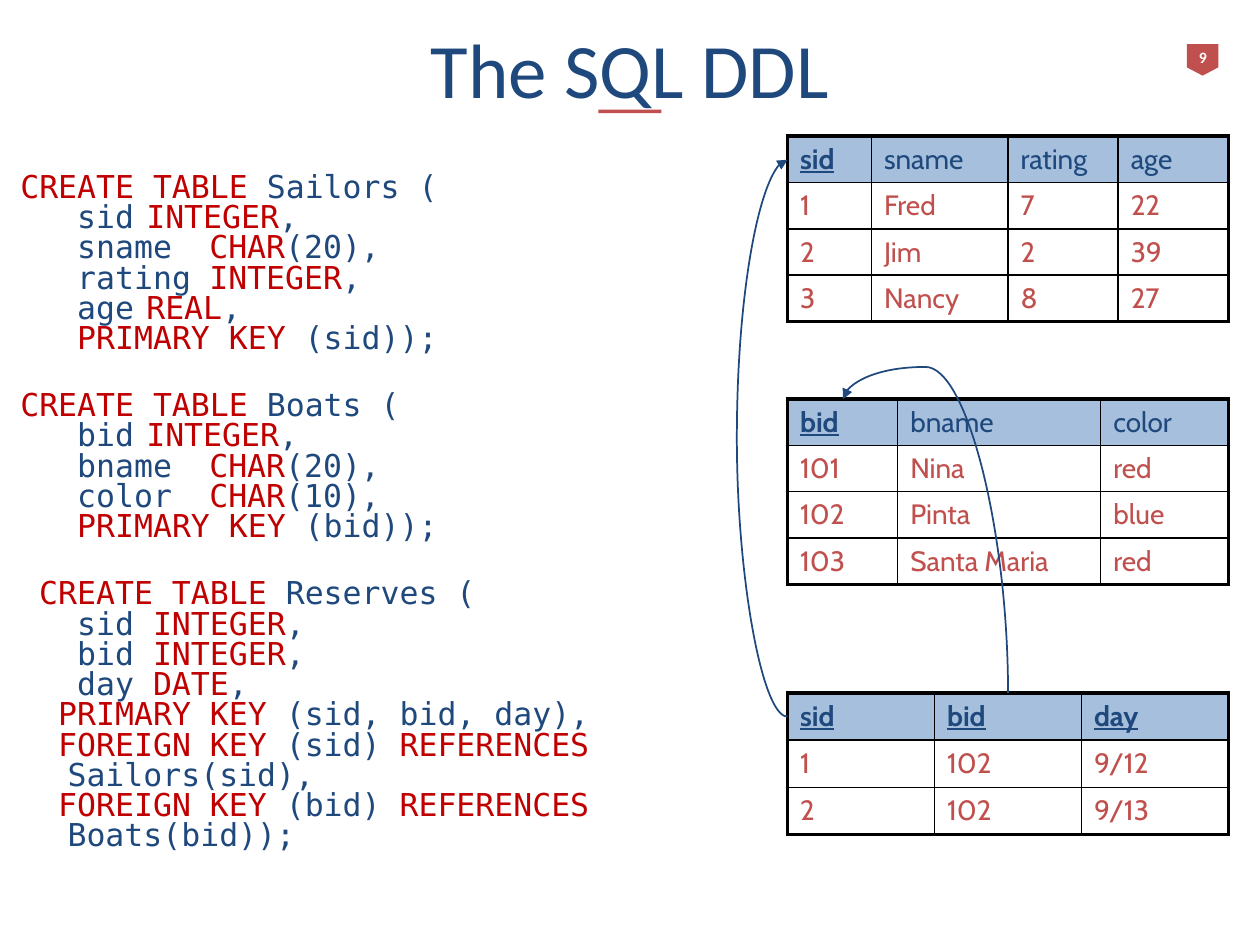
from pptx import Presentation
from pptx.dml.color import RGBColor
from pptx.enum.shapes import MSO_CONNECTOR, MSO_SHAPE
from pptx.enum.text import MSO_ANCHOR, PP_ALIGN
from pptx.oxml import parse_xml
from pptx.oxml.ns import nsdecls
from pptx.util import Pt

CURVE = MSO_CONNECTOR.CURVE
PENTAGON, RECTANGLE = MSO_SHAPE.PENTAGON, MSO_SHAPE.RECTANGLE
MIDDLE, CENTER = MSO_ANCHOR.MIDDLE, PP_ALIGN.CENTER

COLORS = {"navy": "1F497D", "red": "C0504D", "keyword": "C00000",
          "blue": "4F81BD", "white": "FFFFFF", "black": "000000"}
HEADING_FONT, TABLE_FONT, CODE_FONT = "Calibri", "Cabin", "DejaVu Sans Mono"
CHARACTER = 10.84  # width of one code character at 18 pt
HANGING = 27
THICK, THIN = 2.25, 1

# Each statement: column of the data types, then (indent in characters, line).
# Keywords stand between asterisks.
STATEMENTS = [
    (10, [(0, "*CREATE TABLE *Sailors ("), (3, "sid\t*INTEGER*,"),
          (3, "sname\t*CHAR*(20),"), (3, "rating\t*INTEGER*,"),
          (3, "age\t*REAL*,"), (3, "*PRIMARY KEY* (sid));")]),
    (9, [(0, "*CREATE TABLE* Boats ("), (3, "bid\t*INTEGER*,"),
         (3, "bname\t*CHAR*(20),"), (3, "color\t*CHAR*(10),"),
         (3, "*PRIMARY KEY* (bid));")]),
    (7, [(1, "*CREATE TABLE* Reserves ("), (3, "sid *INTEGER*,"),
         (3, "bid *INTEGER*,"), (3, "day *DATE*,"),
         (2, "*PRIMARY KEY* (sid, bid, day),"),
         (2, "*FOREIGN KEY* (sid) *REFERENCES *Sailors(sid),"),
         (2, "*FOREIGN KEY* (bid) *REFERENCES *Boats(bid));")]),
]

# Top, row height, column widths, number of key columns, rows
TABLES = [
    (77.8, 26.5, [48, 78, 63, 63], 1,
     [["sid", "sname", "rating", "age"], ["1", "Fred", "7", "22"],
      ["2", "Jim", "2", "39"], ["3", "Nancy", "8", "27"]]),
    (228, 26.5, [63, 116, 73], 1,
     [["bid", "bname", "color"], ["101", "Nina", "red"],
      ["102", "Pinta", "blue"], ["103", "Santa Maria", "red"]]),
    (396, 27, [84, 84, 84], 3,
     [["sid", "bid", "day"], ["1", "102", "9/12"], ["2", "102", "9/13"]]),
]


def color(name):
    return RGBColor.from_string(COLORS[name])


def add_run(paragraph, text, font, size, color_name, bold=False, underline=False):
    run = paragraph.add_run()
    run.text = text
    run.font.name, run.font.size = font, Pt(size)
    run.font.bold, run.font.underline = bold, underline
    run.font.color.rgb = color(color_name)


def add_solid(shapes, kind, left, top, width, height):
    shape = shapes.add_shape(kind, Pt(left), Pt(top), Pt(width), Pt(height))
    shape.shadow.inherit = False
    shape.fill.solid()
    shape.fill.fore_color.rgb = color("red")
    shape.line.fill.background()
    return shape


def add_title(slide):
    title = slide.shapes.title
    title.left, title.top, title.width, title.height = Pt(36), Pt(18), Pt(648), Pt(41)
    title.text_frame.vertical_anchor = MIDDLE
    paragraph = title.text_frame.paragraphs[0]
    paragraph.alignment = CENTER
    add_run(paragraph, "The SQL DDL", HEADING_FONT, 44, "navy")
    add_solid(slide.shapes, RECTANGLE, 342, 62.6, 36, 2)


def add_page_badge(slide):
    group = slide.shapes.add_group_shape()
    badge = add_solid(group.shapes, PENTAGON, 678.2, 25.2, 18, 18)
    badge.rotation = 90
    badge.adjustments[0] = 0.26
    label = group.shapes.add_textbox(Pt(675.4), Pt(23.8), Pt(24), Pt(18))
    label.text_frame.word_wrap = False
    paragraph = label.text_frame.paragraphs[0]
    paragraph.alignment = CENTER
    add_run(paragraph, "9", HEADING_FONT, 9, "white", bold=True)


def indent_code(paragraph, characters, type_column, wraps):
    """Indent the first line, hang a wrapped one, and align the data types."""
    properties = paragraph._p.get_or_add_pPr()
    margin = HANGING if wraps else 0
    properties.set("marL", str(Pt(margin)))
    properties.set("indent", str(Pt(characters * CHARACTER - margin)))
    properties.append(parse_xml(
        f'<a:tabLst {nsdecls("a")}>'
        f'<a:tab pos="{Pt(type_column * CHARACTER)}" algn="l"/></a:tabLst>'))


def add_code(slide):
    box = slide.shapes.add_textbox(Pt(4.5), Pt(96), Pt(456), Pt(402))
    frame = box.text_frame
    frame.word_wrap = True
    paragraph = None
    for type_column, lines in STATEMENTS:
        for number, (characters, line) in enumerate(lines):
            new_statement = paragraph is not None and number == 0
            paragraph = frame.paragraphs[0] if paragraph is None else frame.add_paragraph()
            paragraph.line_spacing = 0.8
            paragraph.space_before = Pt(21 if new_statement else 0)
            indent_code(paragraph, characters, type_column, "REFERENCES" in line)
            for part, text in enumerate(line.split("*")):
                if text:
                    add_run(paragraph, text, CODE_FONT, 18, "keyword" if part % 2 else "navy")


def set_borders(cell, widths):
    """Set the left, right, top and bottom border widths."""
    properties = cell._tc.get_or_add_tcPr()
    for position, (side, width) in enumerate(zip("LRTB", widths)):
        properties.insert(position, parse_xml(
            f'<a:ln{side} {nsdecls("a")} w="{Pt(width)}"><a:solidFill>'
            f'<a:srgbClr val="{COLORS["black"]}"/></a:solidFill></a:ln{side}>'))


def fill_cell(cell, is_header):
    cell.fill.solid()
    cell.fill.fore_color.rgb = color("blue" if is_header else "white")
    if is_header:
        solid = cell._tc.tcPr.find("{*}solidFill")
        solid[0].append(parse_xml(f'<a:alpha {nsdecls("a")} val="50000"/>'))


def add_data_table(slide, top, row_height, widths, key_count, rows):
    last_row, last_column = len(rows) - 1, len(widths) - 1
    table = slide.shapes.add_table(len(rows), len(widths), Pt(450), Pt(top),
                                   Pt(sum(widths)), Pt(row_height * len(rows))).table
    table.horz_banding = False
    for column, width in zip(table.columns, widths):
        column.width = Pt(width)
    for r, values in enumerate(rows):
        table.rows[r].height = Pt(row_height)
        for c, value in enumerate(values):
            cell = table.cell(r, c)
            is_header = r == 0
            is_key = is_header and c < key_count
            add_run(cell.text_frame.paragraphs[0], value, TABLE_FONT, 16,
                    "navy" if is_header else "red", is_key, is_key)
            outer = (c == 0, c == last_column, r == 0, r == last_row)
            set_borders(cell, [THICK if edge else THIN for edge in outer])
            fill_cell(cell, is_header)


def add_reference_arrow(slide, left, top, width, height, rotation, bend):
    """Draw a curve from the box's top right to its bottom left, then rotate it."""
    arrow = slide.shapes.add_connector(CURVE, Pt(left + width), Pt(top),
                                       Pt(left), Pt(top + height))
    arrow.rotation = rotation
    arrow.line.color.rgb = color("navy")
    arrow.line.width = Pt(1)
    properties = arrow._element.spPr
    properties.find("{*}prstGeom").get_or_add_avLst().append(parse_xml(
        f'<a:gd {nsdecls("a")} name="adj1" fmla="val {round(bend * 100000)}"/>'))
    arrow.line._get_or_add_ln().append(
        parse_xml(f'<a:tailEnd {nsdecls("a")} type="triangle"/>'))
    properties.append(parse_xml(f'<a:effectLst {nsdecls("a")}/>'))


def main():
    presentation = Presentation()
    presentation.slide_width, presentation.slide_height = Pt(720), Pt(540)
    slide = presentation.slides.add_slide(presentation.slide_layouts[5])
    add_page_badge(slide)
    add_title(slide)
    add_code(slide)
    for table in TABLES:
        add_data_table(slide, *table)
    add_reference_arrow(slide, 450, 91.3, 0.12, 318.2, 180, -255)
    add_reference_arrow(slide, 444.9, 265, 168, 94.3, 90, 1.11)
    presentation.save("out.pptx")


if __name__ == "__main__":
    main()
